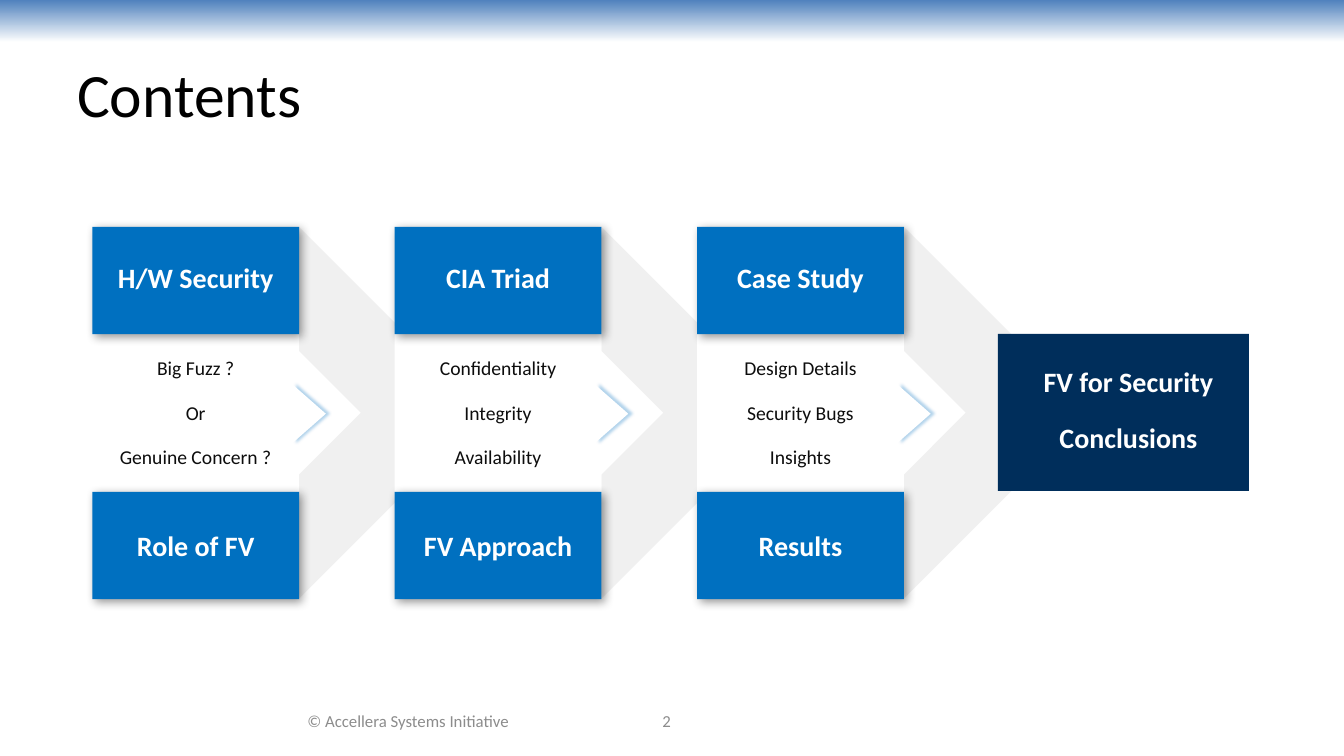
from dataclasses import dataclass
from typing import NamedTuple, Optional

from lxml.etree import SubElement
from pptx import Presentation
from pptx.dml.color import RGBColor
from pptx.enum.shapes import MSO_SHAPE
from pptx.enum.text import MSO_ANCHOR, PP_ALIGN
from pptx.oxml.ns import qn
from pptx.util import Inches, Pt

COLORS = {
    "band": "4F81BD",
    "white": "FFFFFF",
    "title": "000000",
    "footer": "8C8C8C",
    "chevron": "F0F0F0",
    "topic": "0070C0",
    "detail": "0D0D0D",
    "conclusion": "002E5B",
}
FONT = "Calibri"
SLIDE_WIDTH, SLIDE_HEIGHT = Inches(13.333), Inches(7.5)
STAGE_PITCH = 22.5


class Area(NamedTuple):
    """Left, top, width and height in percent of the slide's size."""

    left: float
    top: float
    width: float
    height: float

    def at_stage(self, index: int) -> "Area":
        return self._replace(left=self.left + index * STAGE_PITCH)

    def emu(self) -> tuple:
        return (
            int(SLIDE_WIDTH * self.left / 100),
            int(SLIDE_HEIGHT * self.top / 100),
            int(SLIDE_WIDTH * self.width / 100),
            int(SLIDE_HEIGHT * self.height / 100),
        )


class Shadow(NamedTuple):
    """Outer shadow: opacity in percent, blur and distance in points."""

    color: str
    opacity: int
    blur: float
    distance: float
    degrees: int


@dataclass(frozen=True)
class TextStyle:
    """Look of a text; leading is an exact line height in points."""

    size: int
    color: str
    bold: bool = False
    align: PP_ALIGN = PP_ALIGN.CENTER
    leading: Optional[int] = None
    left_inset: float = 0.1


@dataclass(frozen=True)
class Stage:
    """One column of the flow: a topic, its details and a second topic."""

    topic: str
    details: tuple
    outcome: str


STAGES = (
    Stage("H/W Security", ("Big Fuzz ?", "Or", "Genuine Concern ?"), "Role of FV"),
    Stage("CIA Triad", ("Confidentiality", "Integrity", "Availability"), "FV Approach"),
    Stage("Case Study", ("Design Details", "Security Bugs", "Insights"), "Results"),
)

BAND = Area(0, 0, 100, 5.6)
TITLE = Area(5, 4, 90, 16.67)
COPYRIGHT = Area(18.3, 92.67, 24.15, 5.33)
PAGE_NUMBER = Area(40, 92.67, 19.2, 5.33)
CHEVRON = Area(12.45, 37.2, 19.58, 34.8)
DETAILS = Area(6.87, 43.07, 15.38, 23.07)
TOPIC = Area(6.87, 30, 15.38, 14.2)
OUTCOME = Area(6.87, 65.05, 15.38, 14.2)
CONCLUSION = Area(74.25, 44.15, 18.68, 20.8)
POINTER = Area(20.83, 52.53, 4.35, 4.4)

TITLE_STYLE = TextStyle(44, "title", align=PP_ALIGN.LEFT)
FOOTER_STYLE = TextStyle(12, "footer")
DETAIL_STYLE = TextStyle(14, "detail", leading=16)
TOPIC_STYLE = TextStyle(20, "white", bold=True, leading=20)
OUTCOME_STYLE = TextStyle(20, "white", bold=True)
CONCLUSION_STYLE = TextStyle(20, "white", bold=True, leading=20, left_inset=0.2)

TOPIC_SHADOW = Shadow("title", 40, 7, 3, 45)
POINTER_SHADOW = Shadow("topic", 30, 2, 3, 0)


def rgb(color: str) -> RGBColor:
    return RGBColor.from_string(COLORS[color])


def write(shape, lines: tuple, style: TextStyle) -> None:
    frame = shape.text_frame
    frame.word_wrap = True
    frame.vertical_anchor = MSO_ANCHOR.MIDDLE
    frame.margin_left = Inches(style.left_inset)
    frame.text = "\n".join(lines)
    for index, paragraph in enumerate(frame.paragraphs):
        paragraph.alignment = style.align
        if style.leading:
            paragraph.line_spacing = Pt(style.leading)
            if index:
                paragraph.space_before = Pt(style.leading)
        for run in paragraph.runs:
            run.font.name = FONT
            run.font.size = Pt(style.size)
            run.font.bold = style.bold
            run.font.color.rgb = rgb(style.color)


def add_label(slide, area: Area, text: str, style: TextStyle) -> None:
    write(slide.shapes.add_textbox(*area.emu()), (text,), style)


def cast_shadow(shape, shadow: Shadow) -> None:
    effects = shape._element.spPr.find(qn("a:effectLst"))
    outer = SubElement(
        effects,
        qn("a:outerShdw"),
        blurRad=str(Pt(shadow.blur)),
        dist=str(Pt(shadow.distance)),
        dir=str(shadow.degrees * 60000),
        algn="ctr",
        rotWithShape="0",
    )
    color = SubElement(outer, qn("a:srgbClr"), val=COLORS[shadow.color])
    SubElement(color, qn("a:alpha"), val=str(shadow.opacity * 1000))


def add_block(
    slide,
    area: Area,
    fill: str,
    kind: MSO_SHAPE = MSO_SHAPE.RECTANGLE,
    rotation: float = 0,
    shadow: Optional[Shadow] = None,
    lines: tuple = (),
    style: Optional[TextStyle] = None,
):
    block = slide.shapes.add_shape(kind, *area.emu())
    block.rotation = rotation
    block.fill.solid()
    block.fill.fore_color.rgb = rgb(fill)
    block.line.fill.background()
    block.shadow.inherit = False
    if shadow:
        cast_shadow(block, shadow)
    if style:
        write(block, lines, style)
    return block


def add_band(slide) -> None:
    band = add_block(slide, BAND, "band")
    band.fill.gradient()
    band.fill.gradient_angle = 270
    for stop, color in zip(band.fill.gradient_stops, ("band", "white")):
        stop.color.rgb = rgb(color)


def add_stage(slide, index: int, stage: Stage) -> None:
    add_block(slide, CHEVRON.at_stage(index), "chevron", MSO_SHAPE.HALF_FRAME, 135)
    add_block(slide, DETAILS.at_stage(index), "white", lines=stage.details, style=DETAIL_STYLE)
    for area, text, style in (
        (TOPIC, stage.topic, TOPIC_STYLE),
        (OUTCOME, stage.outcome, OUTCOME_STYLE),
    ):
        add_block(slide, area.at_stage(index), "topic", shadow=TOPIC_SHADOW, lines=(text,), style=style)


def main() -> None:
    """Build the contents slide and save it."""
    deck = Presentation()
    deck.slide_width, deck.slide_height = SLIDE_WIDTH, SLIDE_HEIGHT
    slide = deck.slides.add_slide(deck.slide_layouts[6])
    add_band(slide)
    add_label(slide, TITLE, "Contents", TITLE_STYLE)
    add_label(slide, COPYRIGHT, "© Accellera Systems Initiative", FOOTER_STYLE)
    add_label(slide, PAGE_NUMBER, "2", FOOTER_STYLE)
    for index, stage in enumerate(STAGES):
        add_stage(slide, index, stage)
    add_block(slide, CONCLUSION, "conclusion", lines=("FV for Security", "Conclusions"), style=CONCLUSION_STYLE)
    for index in range(len(STAGES)):
        add_block(slide, POINTER.at_stage(index), "white", MSO_SHAPE.ISOSCELES_TRIANGLE, 90, POINTER_SHADOW)
    deck.save("out.pptx")


if __name__ == "__main__":
    main()
